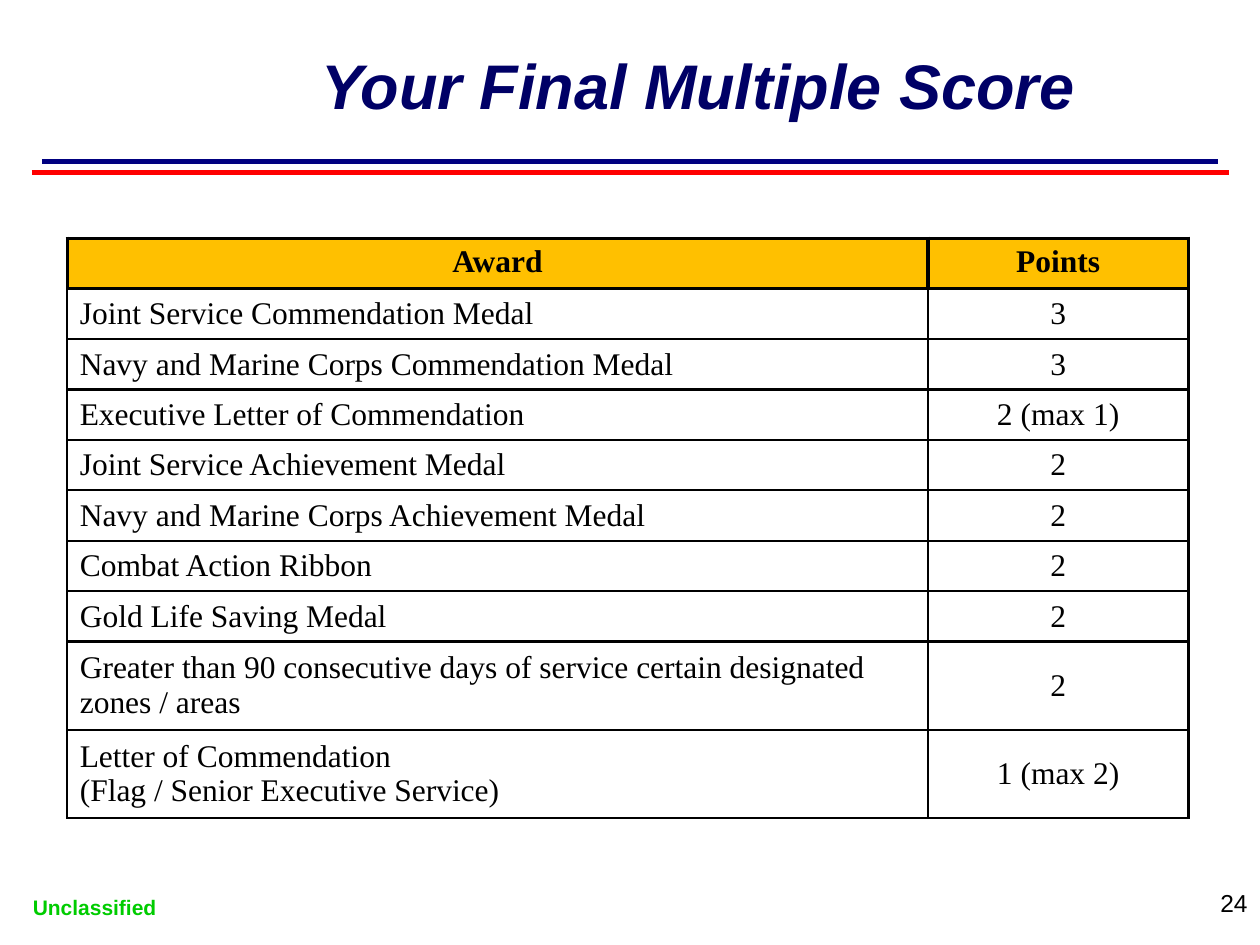
from lxml import etree
from pptx import Presentation
from pptx.dml.color import RGBColor
from pptx.enum.shapes import MSO_CONNECTOR
from pptx.enum.text import MSO_ANCHOR as ANCHOR, MSO_AUTO_SIZE as FIT, PP_ALIGN as ALIGN
from pptx.oxml.ns import qn
from pptx.util import Pt

BLACK = RGBColor(0x00, 0x00, 0x00)
NAVY = RGBColor(0x00, 0x00, 0x80)
TITLE_BLUE = RGBColor(0x00, 0x00, 0x66)
RED = RGBColor(0xFF, 0x00, 0x00)
GREEN = RGBColor(0x00, 0xCC, 0x00)
GOLD = RGBColor(0xFF, 0xC0, 0x00)

HEADER = ("Award", "Points")
AWARDS = [
    ("Joint Service Commendation Medal", "3"),
    ("Navy and Marine Corps Commendation Medal", "3"),
    ("Executive Letter of Commendation", "2 (max 1)"),
    ("Joint Service Achievement Medal", "2"),
    ("Navy and Marine Corps Achievement Medal", "2"),
    ("Combat Action Ribbon", "2"),
    ("Gold Life Saving Medal", "2"),
    ("Greater than 90 consecutive days of service certain designated zones / areas", "2"),
    ("Letter of Commendation\n(Flag / Senior Executive Service)", "1 (max 2)"),
]


def write(tf, text, size, color, align, font="Arial", bold=False, italic=False):
    p = tf.paragraphs[0]
    p.alignment = align
    for i, line in enumerate(text.split("\n")):
        if i:
            p.add_line_break()
        r = p.add_run()
        r.text = line
        r.font.name = font
        r.font.size = Pt(size)
        r.font.bold = bold
        r.font.italic = italic
        r.font.color.rgb = color


def set_borders(cell, widths):
    """Draw black left, right, top and bottom borders of the given widths."""
    tcPr = cell._tc.get_or_add_tcPr()
    for i, (side, width) in enumerate(zip("LRTB", widths)):
        ln = etree.Element(qn(f"a:ln{side}"), w=str(Pt(width)))
        fill = etree.SubElement(ln, qn("a:solidFill"))
        etree.SubElement(fill, qn("a:srgbClr"), val=str(BLACK))
        tcPr.insert(i, ln)


prs = Presentation()
prs.slide_width, prs.slide_height = Pt(720), Pt(540)
s = prs.slides.add_slide(prs.slide_layouts[5])

# Title
title = s.shapes.title
title.left, title.top, title.width, title.height = Pt(78), Pt(3), Pt(642), Pt(90)
title.text_frame.vertical_anchor = ANCHOR.MIDDLE
write(title.text_frame, "Your Final Multiple Score", 36, TITLE_BLUE, ALIGN.CENTER,
      bold=True, italic=True)

# Rules under the title
for margin, y, color in [(24, 92.4, NAVY), (18, 98.6, RED)]:
    rule = s.shapes.add_connector(MSO_CONNECTOR.STRAIGHT, Pt(margin), Pt(y),
                                  Pt(720 - margin), Pt(y))
    rule.line.color.rgb = color
    rule.line.width = Pt(2.5)
    etree.SubElement(rule._element.spPr, qn("a:effectLst"))

# Award table
row_heights = [28.8] * 8 + [50.4] * 2
table = s.shapes.add_table(len(row_heights), 2, Pt(38.4), Pt(136.2),
                           Pt(640.8), Pt(sum(row_heights))).table
table.first_row = table.horz_banding = False
for column, width in zip(table.columns, (491.8, 149)):
    column.width = Pt(width)
for row, height in zip(table.rows, row_heights):
    row.height = Pt(height)

for i, texts in enumerate([HEADER] + AWARDS):
    is_header = i == 0
    for j, text in enumerate(texts):
        cell = table.cell(i, j)
        if is_header:
            cell.fill.solid()
            cell.fill.fore_color.rgb = GOLD
            widths = [2.25] * 4
        else:
            cell.fill.background()
            cell.vertical_anchor = ANCHOR.MIDDLE
            widths = [1.5, 1.5, 2.25 if i == 1 else 1.5, 1.5]
        set_borders(cell, widths)
        align = ALIGN.CENTER if is_header or j == 1 else ALIGN.LEFT
        write(cell.text_frame, text, 18, BLACK, align, "Times New Roman", bold=is_header)

# Classification label
label = s.shapes.add_textbox(Pt(11.5), Pt(507.6), Pt(85), Pt(21.6))
label.text_frame.word_wrap = False
label.text_frame.auto_size = FIT.SHAPE_TO_FIT_TEXT
write(label.text_frame, "Unclassified", 12, GREEN, ALIGN.RIGHT, bold=True)

# Page number
number = s.shapes.add_textbox(Pt(683.3), Pt(504), Pt(36.7), Pt(36))
number.text_frame.word_wrap = True
write(number.text_frame, "24", 14, BLACK, ALIGN.RIGHT)

prs.save("out.pptx")
